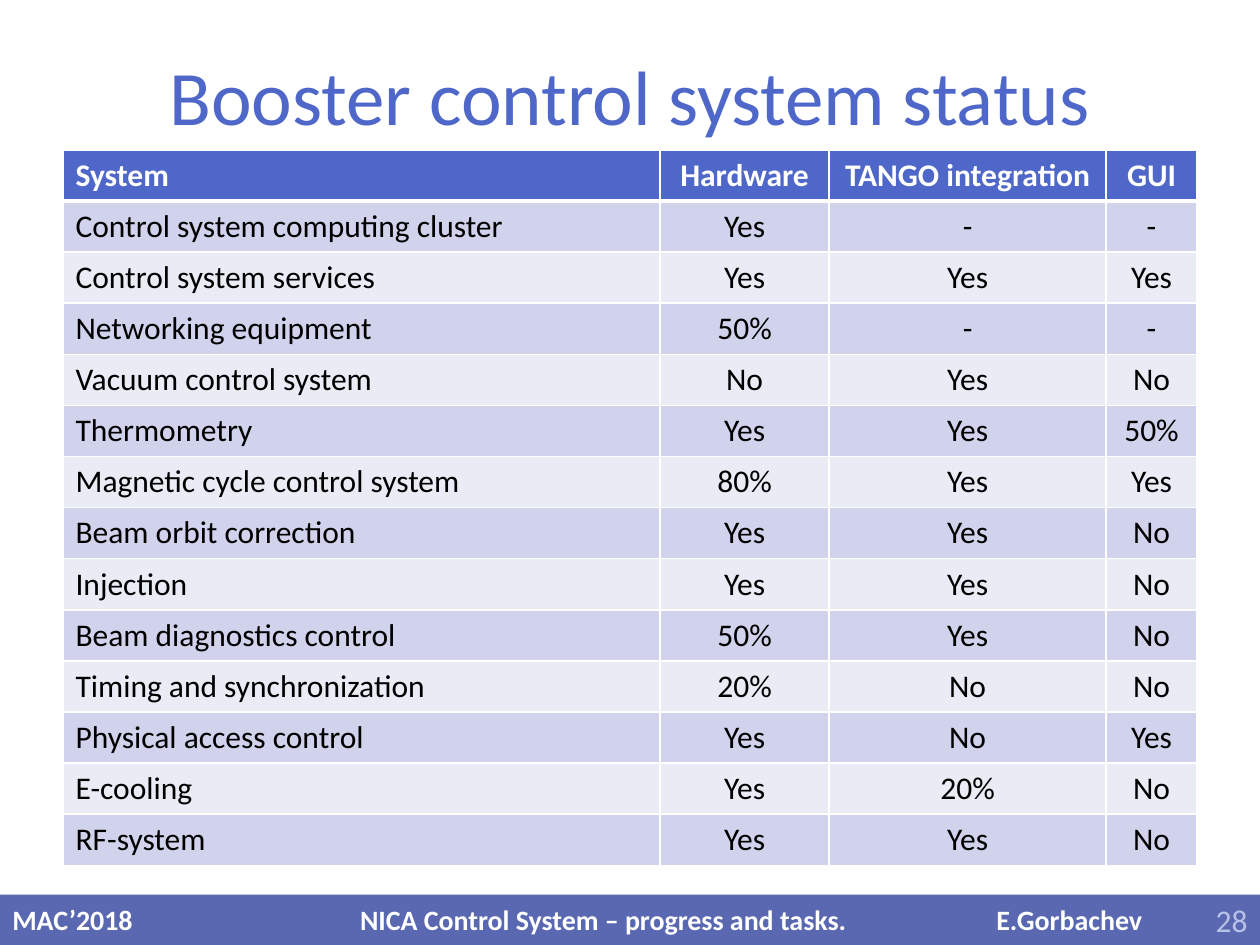
"""Build the Booster control system status slide."""
from lxml.etree import SubElement
from pptx import Presentation
from pptx.dml.color import RGBColor
from pptx.enum.shapes import MSO_SHAPE
from pptx.enum.text import MSO_ANCHOR, PP_ALIGN
from pptx.oxml.ns import qn
from pptx.util import Inches, Pt

BLUE = RGBColor(0x4E, 0x67, 0xC8)
FOOTER_BLUE = RGBColor(0x59, 0x68, 0xB0)
BANDS = [RGBColor(0xE9, 0xEB, 0xF5), RGBColor(0xD0, 0xD3, 0xEB)]
PALE_BLUE = RGBColor(0xB8, 0xC2, 0xE9)
WHITE = RGBColor(0xFF, 0xFF, 0xFF)
BLACK = RGBColor(0, 0, 0)

TITLE = "Booster control system status"
FOOTER = ["MAC’2018", "NICA Control System – progress and tasks.", "E.Gorbachev"]
FOOTER_TABS = [2.76, 7.81]
PAGE = "28"
COLUMN_WIDTHS = [4.74, 1.34, 2.2, 0.72]
TABLE_HEIGHT = 5.68
ROWS = [
    ("System", "Hardware", "TANGO integration", "GUI"),
    ("Control system computing cluster", "Yes", "-", "-"),
    ("Control system services", "Yes", "Yes", "Yes"),
    ("Networking equipment", "50%", "-", "-"),
    ("Vacuum control system", "No", "Yes", "No"),
    ("Thermometry", "Yes", "Yes", "50%"),
    ("Magnetic cycle control system", "80%", "Yes", "Yes"),
    ("Beam orbit correction", "Yes", "Yes", "No"),
    ("Injection", "Yes", "Yes", "No"),
    ("Beam diagnostics control", "50%", "Yes", "No"),
    ("Timing and synchronization", "20%", "No", "No"),
    ("Physical access control", "Yes", "No", "Yes"),
    ("E-cooling", "Yes", "20%", "No"),
    ("RF-system", "Yes", "Yes", "No"),
]


def write(tf, text, size=18, color=BLACK, bold=False, align=PP_ALIGN.LEFT, tabs=()):
    tf.word_wrap = True
    p = tf.paragraphs[0]
    p.alignment = align
    if tabs:
        tab_list = SubElement(p._p.get_or_add_pPr(), qn("a:tabLst"))
        for tab in tabs:
            SubElement(tab_list, qn("a:tab"), pos=str(Inches(tab)), algn="l")
    r = p.add_run()
    r.text = text
    r.font.name = "Calibri"
    r.font.size = Pt(size)
    r.font.bold = bold
    r.font.color.rgb = color


def add_text(s, box, text, **fmt):
    tf = s.shapes.add_textbox(*map(Inches, box)).text_frame
    tf.vertical_anchor = MSO_ANCHOR.MIDDLE
    write(tf, text, **fmt)


def set_borders(cell, top, bottom):
    tc_pr = cell._tc.get_or_add_tcPr()
    for side, width in (("L", 1), ("R", 1), ("T", top), ("B", bottom)):
        line = SubElement(tc_pr, qn(f"a:ln{side}"), w=str(Pt(width)))
        fill = SubElement(line, qn("a:solidFill"))
        SubElement(fill, qn("a:srgbClr"), val=str(WHITE))


def add_status_table(s):
    frame = s.shapes.add_table(len(ROWS), len(COLUMN_WIDTHS), Inches(0.5), Inches(1.19),
                               Inches(sum(COLUMN_WIDTHS)), Inches(TABLE_HEIGHT))
    table = frame.table
    for column, width in zip(table.columns, COLUMN_WIDTHS):
        column.width = Inches(width)
    for i, row in enumerate(ROWS):
        header = i == 0
        for j, text in enumerate(row):
            cell = table.cell(i, j)
            set_borders(cell, top=3 if i == 1 else 1, bottom=3 if header else 1)
            cell.fill.solid()
            cell.fill.fore_color.rgb = BLUE if header else BANDS[i % 2]
            write(cell.text_frame, text, bold=header, color=WHITE if header else BLACK,
                  align=PP_ALIGN.CENTER if j else PP_ALIGN.LEFT)


def add_footer(s):
    bar = s.shapes.add_shape(MSO_SHAPE.RECTANGLE, 0, Inches(7.1), Inches(10), Inches(0.4))
    bar.shadow.inherit = False
    bar.fill.solid()
    bar.fill.fore_color.rgb = FOOTER_BLUE
    bar.line.fill.background()
    write(bar.text_frame, "\t".join(FOOTER), size=16, color=WHITE, bold=True, tabs=FOOTER_TABS)


def main():
    prs = Presentation()
    prs.slide_width, prs.slide_height = Inches(10), Inches(7.5)
    s = prs.slides.add_slide(prs.slide_layouts[6])
    add_footer(s)
    add_text(s, (0.5, 0.13, 9, 1.25), TITLE, size=44, color=BLUE, align=PP_ALIGN.CENTER)
    add_status_table(s)
    add_text(s, (7.67, 7.1, 2.33, 0.4), PAGE, color=PALE_BLUE, align=PP_ALIGN.RIGHT)
    prs.save("out.pptx")


if __name__ == "__main__":
    main()
